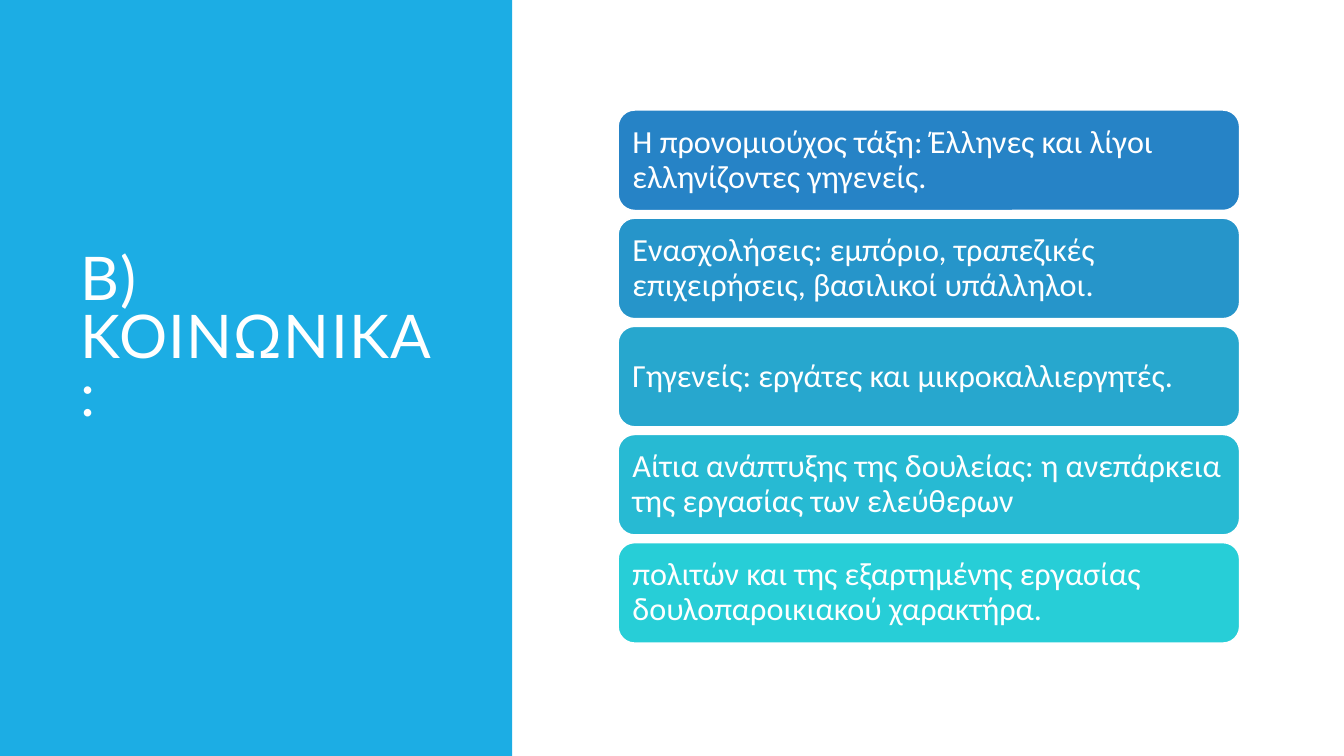
"""Build the slide on social conditions: a title panel beside five stacked statements."""
from dataclasses import dataclass

from pptx import Presentation
from pptx.dml.color import RGBColor
from pptx.enum import shapes, text
from pptx.util import Pt


@dataclass(frozen=True)
class Theme:
    panel: str = "1CADE4"
    white: str = "FFFFFF"
    bars: tuple = ("2683C6", "2695CA", "27A7CE", "27BAD3", "27CED7")
    title_font: str = "Lato"
    body_font: str = "Calibri"
    title_size: int = 43
    body_size: int = 23


theme = Theme()


def add_block(page, kind, left, top, width, height, fill):
    block = page.shapes.add_shape(kind, Pt(left), Pt(top), Pt(width), Pt(height))
    block.shadow.inherit = False
    block.fill.solid()
    block.fill.fore_color.rgb = RGBColor.from_string(fill)
    block.line.fill.background()
    return block


def write(box, words, font, size, spacing):
    frame = box.text_frame
    frame.word_wrap = True
    frame.vertical_anchor = text.MSO_ANCHOR.MIDDLE
    para = frame.paragraphs[0]
    para.alignment = text.PP_ALIGN.LEFT
    para.line_spacing = spacing
    span = para.add_run()
    span.text = words
    span.font.name = font
    span.font.size = Pt(size)
    span.font.color.rgb = RGBColor.from_string(theme.white)
    return para, span


deck = Presentation()
deck.slide_width, deck.slide_height = Pt(960), Pt(540)
page = deck.slides.add_slide(deck.slide_layouts[6])

add_block(page, shapes.MSO_SHAPE.RECTANGLE, 0, 0, 365.76, 540, theme.panel)

title = page.shapes.add_textbox(Pt(50.4), Pt(50.4), Pt(269.3), Pt(438.5))
para, span = write(title, "Β) ΚΟΙΝΩΝΙΚΑ:", theme.title_font, theme.title_size, 0.8)
span.font._element.set("spc", "100")
para.add_line_break()
para.font.size = Pt(theme.title_size)

statements = (
    "Η προνομιούχος τάξη: Έλληνες και λίγοι ελληνίζοντες γηγενείς.",
    "Ενασχολήσεις: εμπόριο, τραπεζικές επιχειρήσεις, βασιλικοί υπάλληλοι.",
    "Γηγενείς: εργάτες και μικροκαλλιεργητές.",
    "Αίτια ανάπτυξης της δουλείας: η ανεπάρκεια της εργασίας των ελεύθερων",
    "πολιτών και της εξαρτημένης εργασίας δουλοπαροικιακού χαρακτήρα.",
)
first_top, pitch = 78.5, 77.25
for index, (words, fill) in enumerate(zip(statements, theme.bars)):
    bar = add_block(page, shapes.MSO_SHAPE.ROUNDED_RECTANGLE,
                    441.4, first_top + index * pitch, 444.2, 72, fill)
    bar.line.color.rgb = RGBColor.from_string(theme.white)
    bar.line.width = Pt(1.25)
    frame = bar.text_frame
    frame.margin_left = frame.margin_right = Pt(6.9)
    frame.margin_top = frame.margin_bottom = Pt(6.9)
    write(bar, words, theme.body_font, theme.body_size, 0.9)

deck.save("out.pptx")
